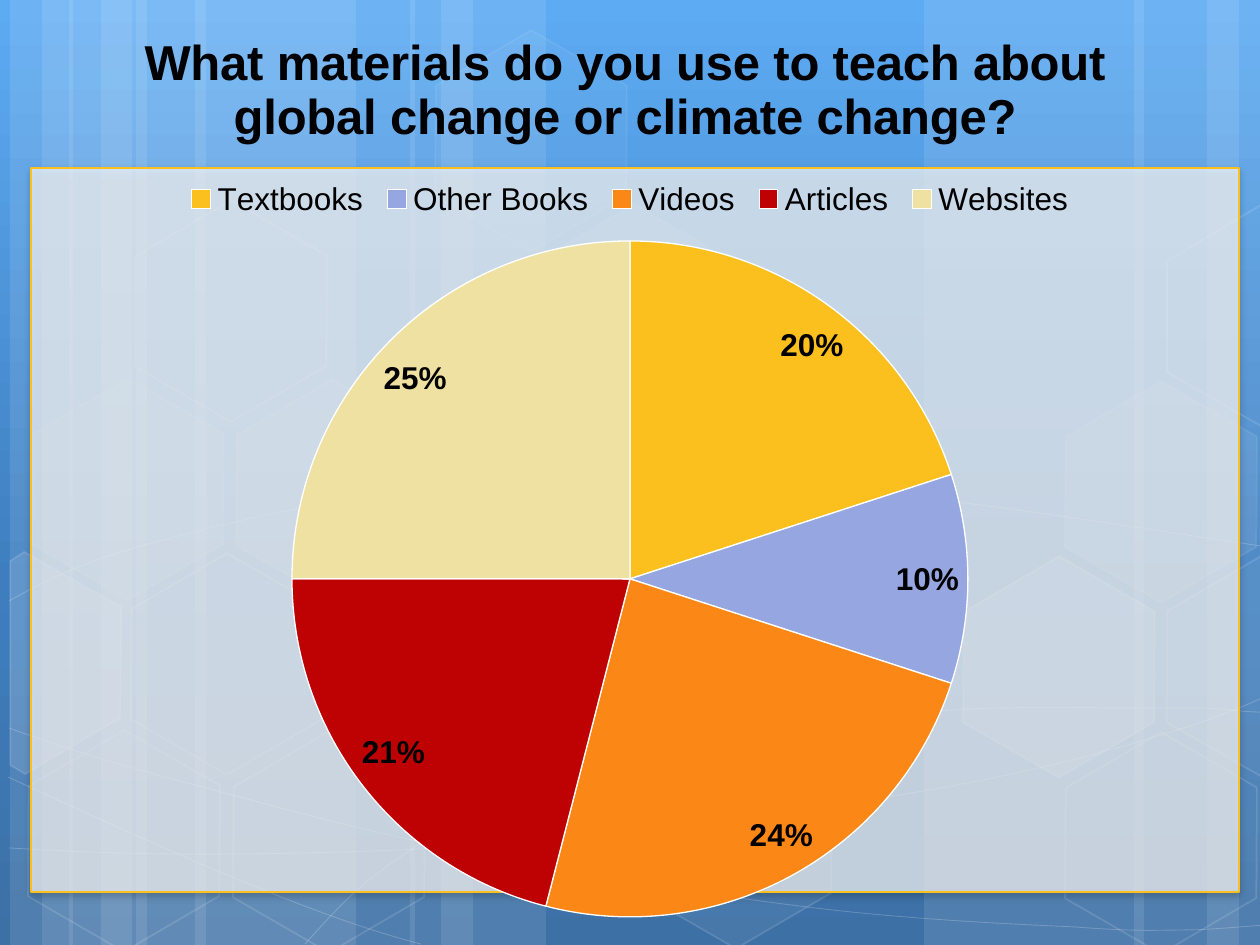
from copy import deepcopy
from math import cos, radians, sin
from typing import NamedTuple, Optional

from lxml import etree
from pptx import Presentation
from pptx.chart.data import CategoryChartData
from pptx.dml.color import RGBColor
from pptx.enum.chart import XL_CHART_TYPE, XL_LABEL_POSITION, XL_LEGEND_POSITION
from pptx.enum.shapes import MSO_SHAPE
from pptx.oxml import parse_xml
from pptx.oxml.ns import nsdecls, qn
from pptx.util import Pt

PIE = XL_CHART_TYPE.PIE
BEST_FIT = XL_LABEL_POSITION.BEST_FIT
LEGEND_TOP = XL_LEGEND_POSITION.TOP
RECTANGLE = MSO_SHAPE.RECTANGLE
HEXAGON = MSO_SHAPE.HEXAGON

PX_PER_INCH = 126
SLIDE_WIDTH, SLIDE_HEIGHT = 1260, 945
CHART_LEFT, CHART_TOP, CHART_WIDTH, CHART_HEIGHT = 21, 21, 1218, 914
HEXAGON_WIDTH, HEXAGON_HEIGHT, TILT = 220, 192, 30
WHITE, BLACK, GOLD = "FFFFFF", "000000", "FBC01E"
FONT = "Arial"
TITLE_LINES = ["What materials do you use to teach about", "global change or climate change?"]


class Style(NamedTuple):
    fill_alpha: Optional[int] = None
    line_alpha: Optional[int] = None
    line_width: float = 1
    line_color: str = WHITE


class Hexagon(NamedTuple):
    left: int
    top: int
    style: Style


class CutHexagon(NamedTuple):
    center: tuple
    points: list
    style: Style


class Slice(NamedTuple):
    category: str
    value: int
    color: str


STRIP = Style(10)
CURVE = Style(None, 20, 0.5)
OPEN = Style(None, 12)
STRONG = Style(10, 12)
SOFT = Style(7, 8)

STRIPS = [(136, 220), (10, 63), (42, 105), (195, 220), (69, 63), (101, 105),
          (924, 220), (1207, 63), (1134, 105), (410, 63), (441, 105)]

CURVES = [
    [(9, 848), (77, 852), (145, 855), (239, 854), (334, 853), (451, 850), (577, 838),
     (703, 825), (882, 801), (998, 777), (1113, 753), (1231, 716), (1269, 694)],
    [(9, 601), (45, 581), (82, 562), (152, 543), (224, 524), (326, 498), (437, 488),
     (549, 479), (685, 478), (824, 488), (963, 498), (1193, 537), (1269, 547)],
    [(8, 777), (160, 847), (311, 916), (421, 944)],
    [(9, 728), (48, 742), (88, 756), (161, 776), (234, 795), (344, 827), (450, 848),
     (554, 869), (687, 892), (791, 905), (896, 919), (1008, 924), (1075, 927),
     (1140, 932), (1158, 930), (1191, 930), (1223, 929), (1246, 926), (1269, 925)],
    [(305, 944), (328, 919), (350, 893), (381, 871), (411, 848), (454, 822), (489, 805),
     (524, 788), (546, 779), (592, 767), (638, 754), (722, 737), (766, 728),
     (811, 719), (818, 719), (857, 717), (896, 713), (958, 709), (1000, 708),
     (1045, 707), (1116, 708), (1116, 708), (1116, 708), (1201, 708), (1201, 708),
     (1223, 709), (1245, 712), (1256, 712), (1268, 713), (1264, 712), (1268, 713)],
]

HEXAGONS = [
    Hexagon(423, 394, STRONG), Hexagon(523, 568, OPEN), Hexagon(524, 219, SOFT),
    Hexagon(421, 45, Style(4, 8)), Hexagon(626, 742, Style(6, 12)),
    Hexagon(14, 745, OPEN), Hexagon(18, 393, SOFT), Hexagon(117, 568, OPEN),
    Hexagon(219, 746, OPEN), Hexagon(222, 394, SOFT), Hexagon(121, 215, OPEN),
    Hexagon(949, 571, STRONG), Hexagon(1051, 747, OPEN), Hexagon(1051, 396, SOFT),
]

CUT_HEXAGONS = [
    CutHexagon((45, 674), [(10, 561), (24, 552), (121, 607), (120, 718), (25, 774), (10, 765)],
               STRONG),
    CutHexagon((1241, 655), [(1167, 611), (1261, 556), (1271, 562), (1271, 772), (1263, 777),
                             (1167, 722)], Style(4, 12)),
    CutHexagon((1241, 304), [(1167, 261), (1261, 205), (1271, 212), (1271, 422), (1263, 427),
                             (1167, 372)], OPEN),
]

SLICES = [
    Slice("Textbooks", 20, GOLD), Slice("Other Books", 10, "96A6E1"),
    Slice("Videos", 24, "FA8716"), Slice("Articles", 21, "BE0204"),
    Slice("Websites", 25, "EFE1A2"),
]


def emu(px: float) -> int:
    return round(px * 914400 / PX_PER_INCH)


def rgb(color: str) -> RGBColor:
    return RGBColor.from_string(color)


def paint(fill, color: str, alpha: int, parent) -> None:
    fill.solid()
    fill.fore_color.rgb = rgb(color)
    node = parent.find(qn("a:solidFill")).find(qn("a:srgbClr"))
    etree.SubElement(node, qn("a:alpha")).set("val", str(alpha * 1000))


def apply_style(shape, style: Style) -> None:
    shape.shadow.inherit = False
    properties = shape._element.spPr
    if style.fill_alpha is None:
        shape.fill.background()
    else:
        paint(shape.fill, WHITE, style.fill_alpha, properties)
    if style.line_alpha is None:
        shape.line.fill.background()
    else:
        shape.line.width = Pt(style.line_width)
        paint(shape.line.fill, style.line_color, style.line_alpha, properties.find(qn("a:ln")))


def add_shape(slide, kind, left: int, top: int, width: int, height: int, style: Style):
    shape = slide.shapes.add_shape(kind, emu(left), emu(top), emu(width), emu(height))
    apply_style(shape, style)
    return shape


def add_outline(slide, points: list, style: Style, close: bool):
    vertices = [(emu(x), emu(y)) for x, y in points]
    builder = slide.shapes.build_freeform(*vertices[0])
    builder.add_line_segments(vertices[1:], close=close)
    shape = builder.convert_to_shape()
    apply_style(shape, style)
    return shape


def add_curve(slide, controls: list) -> None:
    shape = add_outline(slide, controls, CURVE, False)
    lines = list(shape._element.iter(qn("a:lnTo")))
    for start in range(0, len(lines), 3):
        bezier = etree.Element(qn("a:cubicBezTo"))
        lines[start].addprevious(bezier)
        for line in lines[start:start + 3]:
            bezier.append(line[0])
            line.getparent().remove(line)


def add_cut_hexagon(slide, item: CutHexagon) -> None:
    center_x, center_y = item.center
    cosine, sine = cos(radians(TILT)), sin(radians(TILT))
    level = [(center_x + (x - center_x) * cosine + (y - center_y) * sine,
              center_y - (x - center_x) * sine + (y - center_y) * cosine)
             for x, y in item.points]
    add_outline(slide, level, item.style, True).rotation = TILT


def set_background(slide) -> None:
    fill = slide.background.fill
    fill.gradient()
    fill.gradient_angle = 270
    stop_list = slide._element.find(".//" + qn("a:gsLst"))
    stop_list.append(deepcopy(stop_list[-1]))
    colors = [(0, "5DABF3"), (0.62, "3E7EBF"), (1, "3D70A5")]
    for stop, (position, color) in zip(fill.gradient_stops, colors):
        stop.position = position
        stop.color.rgb = rgb(color)


def add_panel(slide) -> None:
    panel = add_shape(slide, RECTANGLE, 31, 168, 1208, 724, Style(70, 100, 0.75, GOLD))
    effects = panel._element.spPr.find(qn("a:effectLst"))
    effects.append(parse_xml(
        f'<a:outerShdw {nsdecls("a")} blurRad="50800" dist="25400" dir="5400000" '
        'rotWithShape="0"><a:srgbClr val="000000"><a:alpha val="28000"/></a:srgbClr>'
        '</a:outerShdw>'))


def place(element, index: int, left: int, top: int, size: tuple = (), target: str = "") -> None:
    for old in element.findall(qn("c:layout")):
        element.remove(old)
    values = [("x", (left - CHART_LEFT) / CHART_WIDTH), ("y", (top - CHART_TOP) / CHART_HEIGHT)]
    values += [(key, length / whole) for key, length, whole
               in zip("wh", size, (CHART_WIDTH, CHART_HEIGHT))]
    content = target + "".join(f'<c:{key}Mode val="edge"/>' for key in "xy")
    content += "".join(f'<c:{key} val="{value:.4f}"/>' for key, value in values)
    element.insert(index, parse_xml(f'<c:layout {nsdecls("c")}><c:manualLayout>{content}'
                                    '</c:manualLayout></c:layout>'))


def set_font(font, size: int, bold: bool) -> None:
    font.name = FONT
    font.size = Pt(size)
    font.bold = bold
    font.color.rgb = rgb(BLACK)


def add_materials_chart(slide) -> None:
    data = CategoryChartData()
    data.categories = [item.category for item in SLICES]
    data.add_series("Series 1", [item.value for item in SLICES])
    chart = slide.shapes.add_chart(PIE, emu(CHART_LEFT), emu(CHART_TOP), emu(CHART_WIDTH),
                                   emu(CHART_HEIGHT), data).chart
    chart.font.name = "TeX Gyre Adventor"
    chart.font.size = Pt(10)
    chart.has_title = True
    frame = chart.chart_title.text_frame
    frame.text = "\n".join(TITLE_LINES)
    for paragraph in frame.paragraphs:
        set_font(paragraph.font, 28, True)
    place(chart.chart_title._element, 1, 141, 31)
    chart.has_legend = True
    chart.legend.position = LEGEND_TOP
    chart.legend.include_in_layout = False
    set_font(chart.legend.font, 18, False)
    place(chart.legend._element, 1, 178, 180, (904, 38))
    plot = chart.plots[0]
    plot.vary_by_categories = True
    place(chart._chartSpace.chart.plotArea, 0, 292, 241, (676, 676),
          '<c:layoutTarget val="inner"/>')
    for index, item in enumerate(SLICES):
        form = plot.series[0].points[index].format
        form.fill.solid()
        form.fill.fore_color.rgb = rgb(item.color)
        form.line.color.rgb = rgb(WHITE)
        form.line.width = Pt(0.75)
    plot.has_data_labels = True
    labels = plot.data_labels
    labels.show_percentage = True
    labels.show_value = False
    labels.number_format = "0%"
    labels.number_format_is_linked = False
    labels.position = BEST_FIT
    set_font(labels.font, 18, True)


def main() -> None:
    presentation = Presentation()
    presentation.slide_width = emu(SLIDE_WIDTH)
    presentation.slide_height = emu(SLIDE_HEIGHT)
    slide = presentation.slides.add_slide(presentation.slide_layouts[6])
    set_background(slide)
    for left, width in STRIPS:
        add_shape(slide, RECTANGLE, left, 0, width, SLIDE_HEIGHT, STRIP)
    for controls in CURVES:
        add_curve(slide, controls)
    for item in HEXAGONS:
        shape = add_shape(slide, HEXAGON, item.left, item.top, HEXAGON_WIDTH, HEXAGON_HEIGHT,
                          item.style)
        shape.adjustments[0] = 0.285
        shape.rotation = TILT
    for item in CUT_HEXAGONS:
        add_cut_hexagon(slide, item)
    add_panel(slide)
    add_materials_chart(slide)
    presentation.save("out.pptx")


if __name__ == "__main__":
    main()
